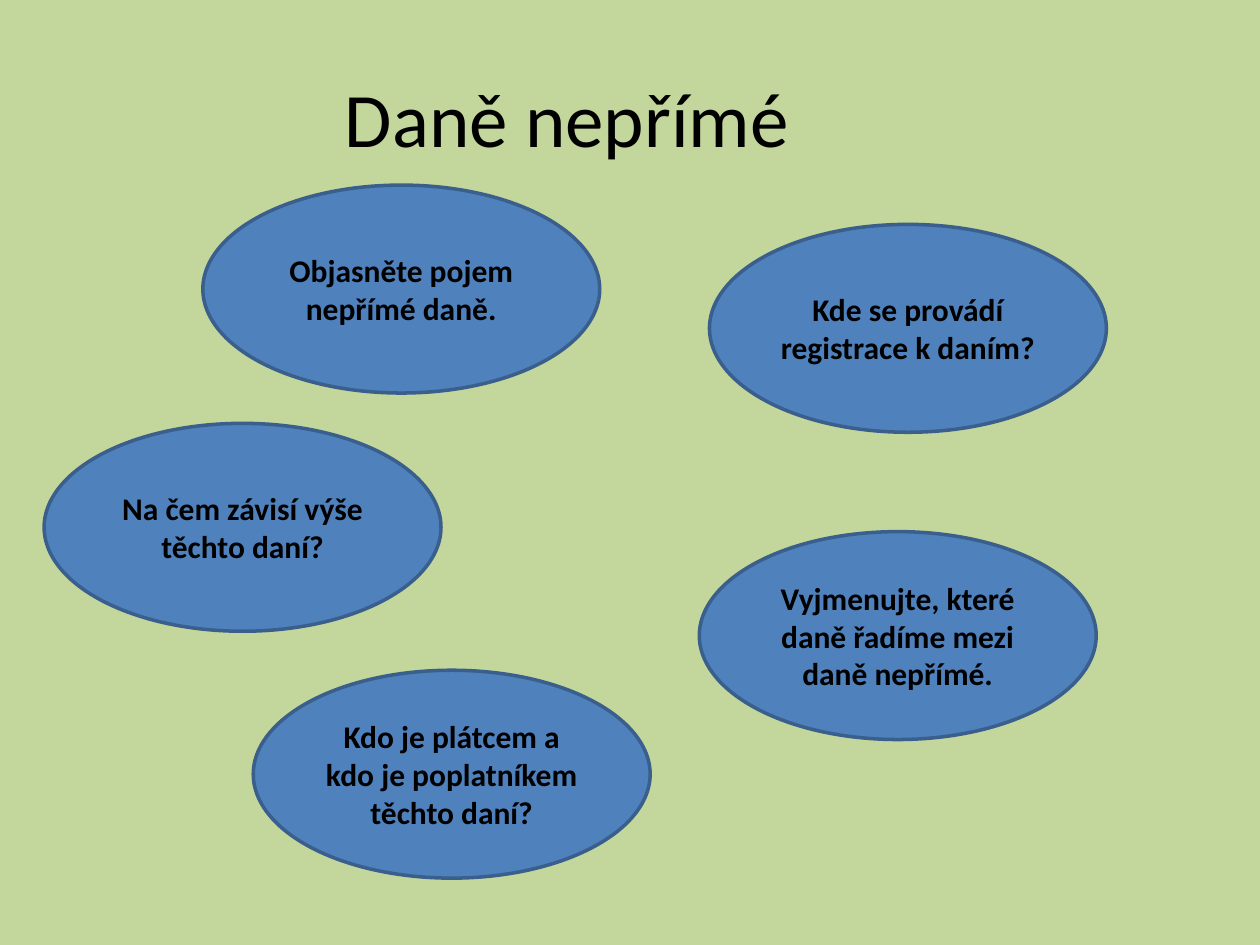
from pptx import Presentation
from pptx.dml.color import RGBColor
from pptx.enum.shapes import MSO_SHAPE
from pptx.enum.text import MSO_ANCHOR, PP_ALIGN
from pptx.util import Pt

BUBBLE_W, BUBBLE_H = 226.8, 118.8
QUESTIONS = [
    (115.9, 105.8, "Objasněte pojem nepřímé daně."),
    (25.2, 241.9, "Na čem závisí výše těchto daní?"),
    (144.7, 383, "Kdo je plátcem a kdo je poplatníkem těchto daní?"),
    (399.6, 303.8, "Vyjmenujte, které daně řadíme mezi daně nepřímé."),
    (405.4, 128.2, "Kde se provádí registrace k daním?"),
]


def paint(color, value):
    color.rgb = RGBColor.from_string(value)


def fill_solid(fill, value):
    fill.solid()
    paint(fill.fore_color, value)


def write(sp, text, size, bold=False):
    tf = sp.text_frame
    tf.word_wrap = True
    tf.vertical_anchor = MSO_ANCHOR.MIDDLE
    p = tf.paragraphs[0]
    p.alignment = PP_ALIGN.CENTER
    r = p.add_run()
    r.text = text
    r.font.name = "Calibri"
    r.font.size = Pt(size)
    r.font.bold = bold
    paint(r.font.color, "000000")


def set_title(s, text):
    sp = s.shapes.title
    sp.left, sp.top, sp.width, sp.height = Pt(0), Pt(21.6), Pt(648), Pt(90)
    write(sp, text, 44)


def add_bubble(s, left, top, text):
    sp = s.shapes.add_shape(MSO_SHAPE.OVAL, Pt(left), Pt(top), Pt(BUBBLE_W), Pt(BUBBLE_H))
    sp.shadow.inherit = False
    fill_solid(sp.fill, "4F81BD")
    paint(sp.line.color, "3A5F8C")
    sp.line.width = Pt(2)
    write(sp, text, 18, bold=True)


def main():
    prs = Presentation()
    prs.slide_width, prs.slide_height = Pt(720), Pt(540)
    s = prs.slides.add_slide(prs.slide_layouts[5])
    fill_solid(s.background.fill, "C3D69B")
    set_title(s, "Daně nepřímé")
    for left, top, text in QUESTIONS:
        add_bubble(s, left, top, text)
    prs.save("out.pptx")


if __name__ == "__main__":
    main()
